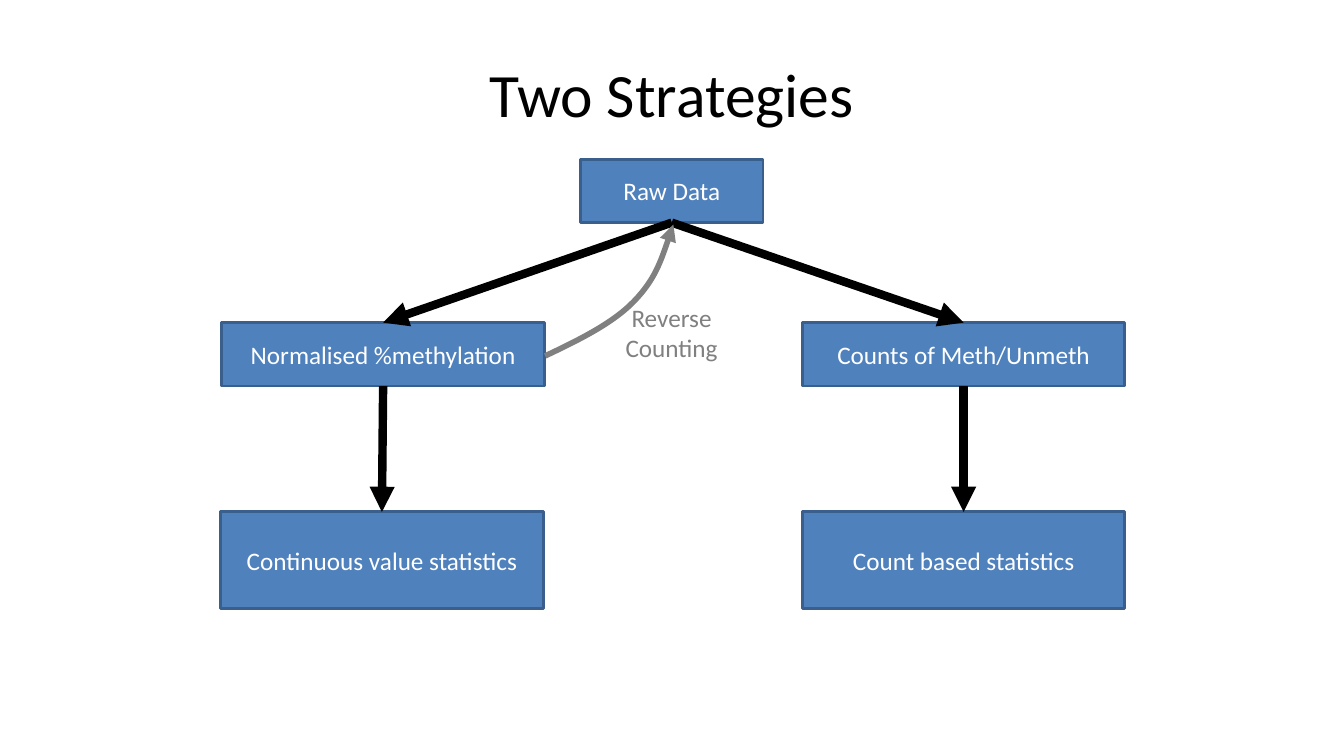
from pptx import Presentation
from pptx import util as u
from pptx.dml.color import RGBColor
from pptx.enum import shapes, text
from pptx.oxml.ns import qn
from lxml import etree

BLACK = RGBColor(0x00, 0x00, 0x00)
WHITE = RGBColor(0xFF, 0xFF, 0xFF)
GREY = RGBColor(0x80, 0x80, 0x80)
BLUE = RGBColor(0x4F, 0x81, 0xBD)
DARK_BLUE = RGBColor(0x3A, 0x5F, 0x8C)


def write(box, lines, size, color, anchor=text.MSO_ANCHOR.MIDDLE, wrap=True):
    frame = box.text_frame
    frame.word_wrap = wrap
    frame.vertical_anchor = anchor
    for number, line in enumerate(lines):
        para = frame.add_paragraph() if number else frame.paragraphs[0]
        para.alignment = text.PP_ALIGN.CENTER
        span = para.add_run()
        span.text = line
        span.font.name = "Calibri"
        span.font.size = u.Pt(size)
        span.font.color.rgb = color


def style_arrow(arrow, color, width):
    arrow.line.color.rgb = color
    arrow.line.width = u.Pt(width)
    outline = arrow.line._get_or_add_ln()
    etree.SubElement(outline, qn("a:tailEnd"), type="triangle")


deck = Presentation()
deck.slide_width, deck.slide_height = u.Cm(33.87), u.Cm(19.05)
page = deck.slides.add_slide(deck.slide_layouts[6])

# Title
title = page.shapes.add_textbox(u.Cm(1.69), u.Cm(0.76), u.Cm(30.48), u.Cm(3.18))
write(title, ["Two Strategies"], 44, BLACK)

# Boxes: left, top, width, height in cm
steps = {
    "Raw Data": (14.63, 4.01, 4.6, 1.6),
    "Normalised %methylation": (5.59, 8.13, 8.13, 1.6),
    "Counts of Meth/Unmeth": (20.22, 8.13, 8.13, 1.6),
    "Count based statistics": (20.22, 12.9, 8.13, 2.44),
    "Continuous value statistics": (5.56, 12.9, 8.13, 2.44),
}
boxes = {}
for label, place in steps.items():
    box = page.shapes.add_shape(shapes.MSO_SHAPE.RECTANGLE, *map(u.Cm, place))
    box.shadow.inherit = False
    box.fill.solid()
    box.fill.fore_color.rgb = BLUE
    box.line.color.rgb = DARK_BLUE
    box.line.width = u.Pt(2)
    write(box, [label], 18, WHITE)
    boxes[label] = box

# Arrows from the bottom of one box to the top of the next
flows = [
    ("Raw Data", "Normalised %methylation"),
    ("Raw Data", "Counts of Meth/Unmeth"),
    ("Counts of Meth/Unmeth", "Count based statistics"),
    ("Normalised %methylation", "Continuous value statistics"),
]
for source, target in flows:
    arrow = page.shapes.add_connector(shapes.MSO_CONNECTOR.STRAIGHT, 0, 0, 0, 0)
    arrow.begin_connect(boxes[source], 2)
    arrow.end_connect(boxes[target], 0)
    style_arrow(arrow, BLACK, 6)
    etree.SubElement(arrow._element.spPr, qn("a:effectLst"))

# Curved arrow back to the raw data: start, then two Bezier segments
curve = [(13.74, 8.97), (14.6, 8.56), (15.44, 8.15), (15.98, 7.59),
         (16.51, 7.04), (16.74, 6.35), (16.97, 5.66)]
points = [(u.Cm(x), u.Cm(y)) for x, y in curve]
builder = page.shapes.build_freeform(*points[0])
builder.add_line_segments(points[1:], close=False)
reverse = builder.convert_to_shape()
reverse.shadow.inherit = False
reverse.fill.background()
style_arrow(reverse, GREY, 4)
outline_path = reverse._element.find(".//" + qn("a:path"))
segments = outline_path.findall(qn("a:lnTo"))
for first in (0, 3):
    bezier = etree.SubElement(outline_path, qn("a:cubicBezTo"))
    for segment in segments[first:first + 3]:
        bezier.append(segment[0])
        outline_path.remove(segment)

# Label of the curved arrow
note = page.shapes.add_textbox(u.Cm(15.49), u.Cm(7.49), u.Cm(2.87), u.Cm(1.8))
write(note, ["Reverse", "Counting"], 18, GREY, text.MSO_ANCHOR.TOP, wrap=False)

deck.save("out.pptx")
